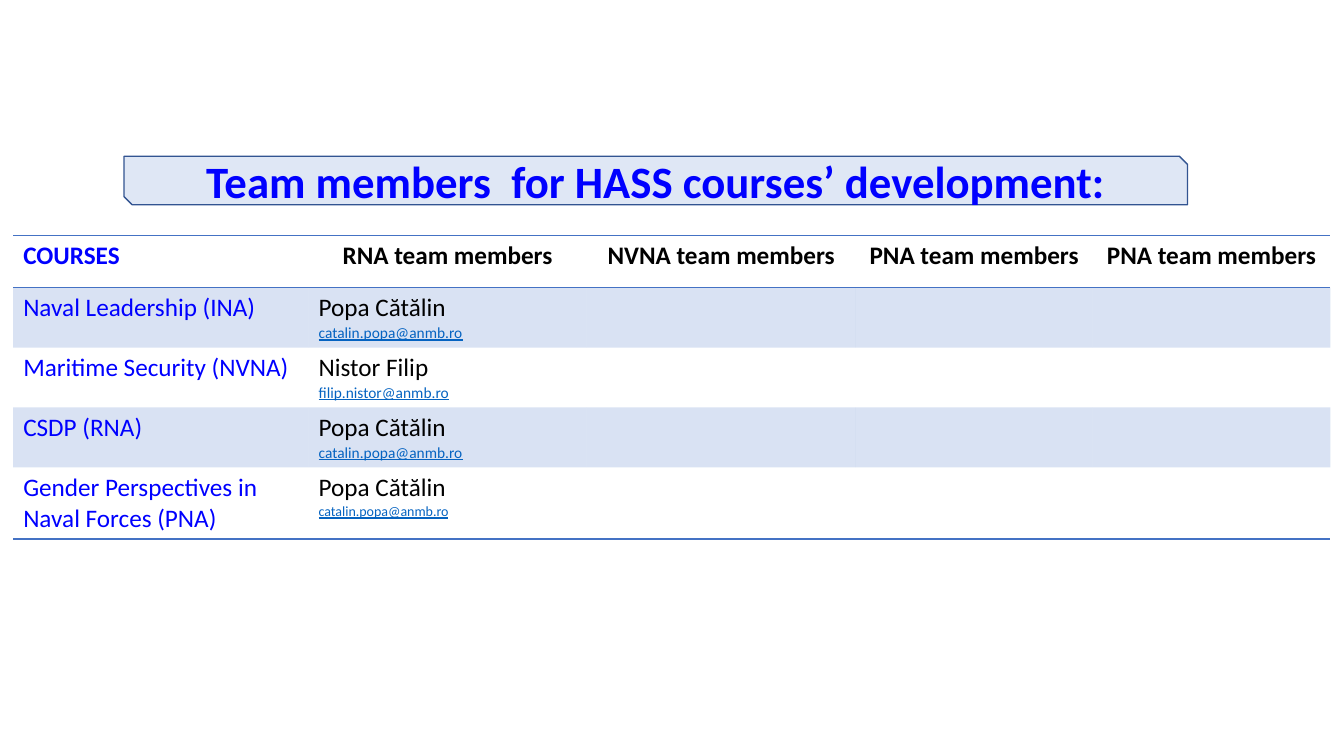
from lxml.etree import SubElement
from pptx import Presentation
from pptx.dml.color import RGBColor
from pptx.enum.shapes import MSO_SHAPE as SHAPE
from pptx.enum.text import MSO_ANCHOR as ANCHOR, PP_ALIGN as ALIGN
from pptx.oxml.ns import qn
from pptx.util import Pt

BLUE = RGBColor(0x00, 0x00, 0xFF)
BLACK = RGBColor(0x00, 0x00, 0x00)
LINK = RGBColor(0x05, 0x63, 0xC1)
ACCENT = RGBColor(0x44, 0x72, 0xC4)
BANNER_FILL = RGBColor(0xDF, 0xE7, 0xF5)
BANNER_LINE = RGBColor(0x32, 0x54, 0x91)
PLAIN_TABLE = "{2D5ABB26-0587-4C30-8999-92F81FD0307C}"

TITLE = "Team members  for HASS courses’ development:"
HEADERS = ["COURSES", "RNA team members", "NVNA team members",
           "PNA team members", "PNA team members"]
COURSES = [
    ("Naval Leadership (INA)", "Popa Cătălin", "catalin.popa@anmb.ro", 11),
    ("Maritime Security (NVNA)", "Nistor Filip", "filip.nistor@anmb.ro", 11),
    ("CSDP (RNA)", "Popa Cătălin", "catalin.popa@anmb.ro", 11),
    ("Gender Perspectives in Naval Forces (PNA)", "Popa Cătălin",
     "catalin.popa@anmb.ro", 10),
]
COL_WIDTHS = [211, 198.7, 192.2, 169.2, 169.9]
ROW_HEIGHTS = [37.5, 42.75, 42.75, 42.75, 51.25]


class SlideBuilder:
    """Draws banners and ruled tables on one slide in a shared style."""

    def __init__(self, s, font="Calibri", size=18):
        self.s, self.font, self.size = s, font, size

    def run(self, p, text, color, size=None, bold=False, underline=False):
        r = p.add_run()
        r.text = text
        f = r.font
        f.name, f.size = self.font, Pt(size or self.size)
        f.bold, f.underline = bold, underline
        f.color.rgb = color

    def banner(self, x, y, w, h, text):
        sp = self.s.shapes.add_shape(SHAPE.SNIP_2_DIAG_RECTANGLE,
                                     Pt(x), Pt(y), Pt(w), Pt(h))
        sp.shadow.inherit = False
        sp.fill.solid()
        sp.fill.fore_color.rgb = BANNER_FILL
        sp.line.color.rgb = BANNER_LINE
        sp.line.width = Pt(1)
        tf = sp.text_frame
        tf.word_wrap = True
        tf.vertical_anchor = ANCHOR.MIDDLE
        p = tf.paragraphs[0]
        p.alignment = ALIGN.CENTER
        self.run(p, text, BLUE, 32, bold=True)

    def border(self, cell, side):
        ln = SubElement(cell._tc.get_or_add_tcPr(), qn(f"a:{side}"), w=str(Pt(1)))
        fill = SubElement(ln, qn("a:solidFill"))
        SubElement(fill, qn("a:srgbClr"), val=str(ACCENT))

    def shade(self, cell, percent):
        cell.fill.solid()
        cell.fill.fore_color.rgb = ACCENT
        color = cell._tc.tcPr.find(".//" + qn("a:solidFill") + "[last()]/" + qn("a:srgbClr"))
        for clr in cell._tc.tcPr.findall(qn("a:solidFill") + "/" + qn("a:srgbClr")):
            color = clr
        SubElement(color, qn("a:alpha"), val=str(percent * 1000))

    def table(self, x, y, widths, heights):
        frame = self.s.shapes.add_table(len(heights), len(widths), Pt(x), Pt(y),
                                        Pt(sum(widths)), Pt(sum(heights)))
        t = frame.table
        t._tbl.tblPr.find(qn("a:tableStyleId")).text = PLAIN_TABLE
        for col, w in zip(t.columns, widths):
            col.width = Pt(w)
        for i, (row, h) in enumerate(zip(t.rows, heights)):
            row.height = Pt(h)
            for cell in row.cells:
                if i == 0:
                    self.border(cell, "lnT")
                if i in (0, len(heights) - 1):
                    self.border(cell, "lnB")
                if i % 2:
                    self.shade(cell, 20)
                else:
                    cell.fill.background()
        return t

    def header(self, t, labels):
        for j, label in enumerate(labels):
            p = t.cell(0, j).text_frame.paragraphs[0]
            p.alignment = ALIGN.CENTER if j else ALIGN.LEFT
            self.run(p, label, BLACK if j else BLUE, bold=True)

    def course(self, t, i, course, member, email, email_size):
        self.run(t.cell(i, 0).text_frame.paragraphs[0], course, BLUE)
        tf = t.cell(i, 1).text_frame
        self.run(tf.paragraphs[0], member, BLACK)
        self.run(tf.add_paragraph(), email, LINK, email_size, underline=True)


def main():
    prs = Presentation()
    prs.slide_width, prs.slide_height = Pt(960), Pt(540)
    b = SlideBuilder(prs.slides.add_slide(prs.slide_layouts[6]))
    b.banner(88.6, 111.6, 759.6, 34.6, TITLE)
    t = b.table(9.4, 168, COL_WIDTHS, ROW_HEIGHTS)
    b.header(t, HEADERS)
    for i, row in enumerate(COURSES, 1):
        b.course(t, i, *row)
    prs.save("out.pptx")


if __name__ == "__main__":
    main()
